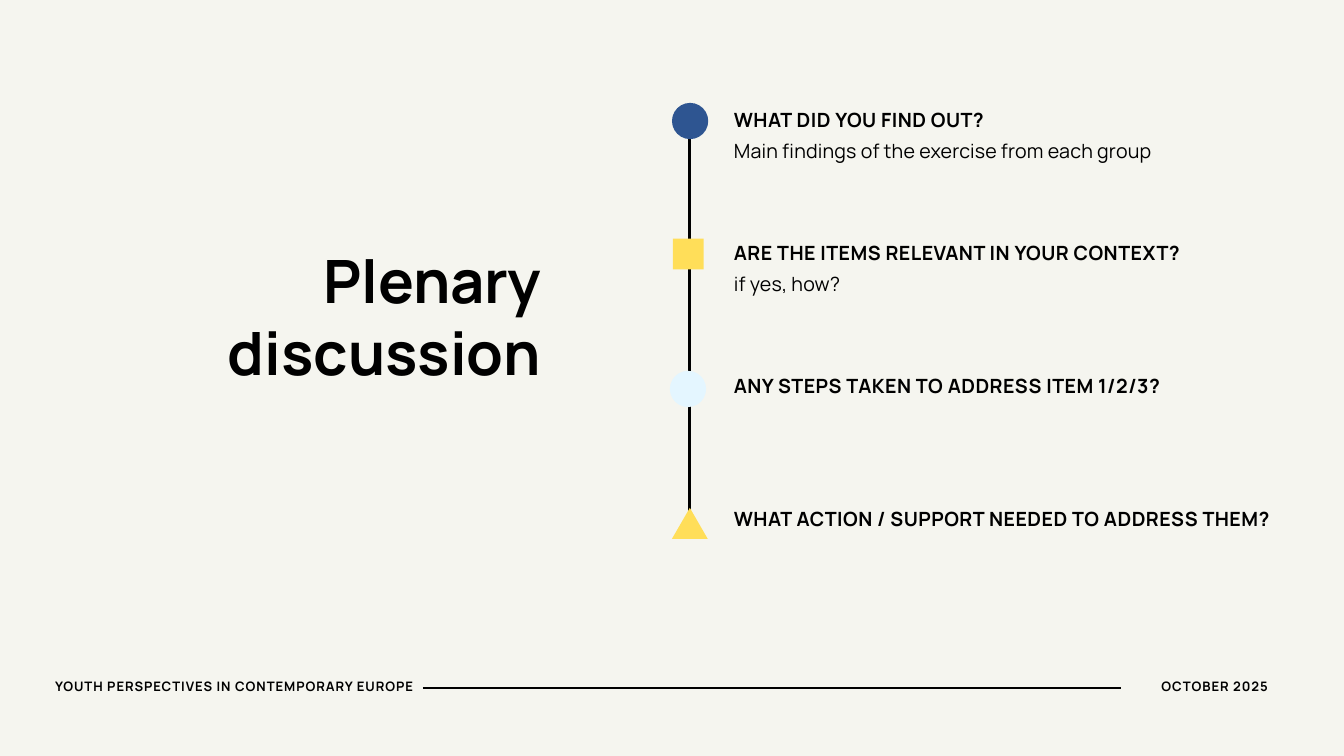
import pptx
import pptx.dml.color
import pptx.enum.shapes
import pptx.enum.text
import pptx.oxml.ns
import pptx.util
from lxml import etree
from pptx.util import Cm, Pt

COLOURS = {
    "paper": "F5F5EF",
    "ink": "000000",
    "blue": "2E5591",
    "yellow": "FFDE59",
    "ice": "E4F6FF",
}
FONT = "Manrope"
SHAPES = pptx.enum.shapes.MSO_SHAPE
ALIGN = pptx.enum.text.PP_ALIGN

FIRST_TOP = 4.09
PITCH = 5.03
DETAIL_OFFSET = 1.07
TEXT_LEFT = 27.74

QUESTIONS = [
    ("WHAT DID YOU FIND OUT?", "Main findings of the exercise from each group", 19.41),
    ("ARE THE ITEMS RELEVANT IN YOUR CONTEXT?", "if yes, how?", 19.41),
    ("ANY STEPS TAKEN TO ADDRESS ITEM 1/2/3?", None, 19.41),
    ("WHAT ACTION / SUPPORT NEEDED TO ADDRESS THEM?", None, 20.68),
]
MARKERS = [
    (SHAPES.OVAL, "blue", 25.4, 3.89, 1.37, 1.37),
    (SHAPES.RECTANGLE, "yellow", 25.43, 9.02, 1.17, 1.17),
    (SHAPES.OVAL, "ice", 25.32, 14.02, 1.37, 1.37),
    (SHAPES.ISOSCELES_TRIANGLE, "yellow", 25.4, 19.2, 1.35, 1.17),
]


def colour(name):
    return pptx.dml.color.RGBColor.from_string(COLOURS[name])


def write_text(box, text, size, leading, bold=True, spacing=0, align=ALIGN.LEFT):
    frame = box.text_frame
    frame.word_wrap = True
    frame.auto_size = pptx.enum.text.MSO_AUTO_SIZE.NONE
    frame.vertical_anchor = pptx.enum.text.MSO_ANCHOR.TOP
    frame.margin_left = frame.margin_right = 0
    frame.margin_top = frame.margin_bottom = 0
    frame.text = text
    para = frame.paragraphs[0]
    para.alignment = align
    para.line_spacing = Pt(leading)
    para.space_before = Pt(0)
    para.font.name = FONT
    para.font.size = Pt(size)
    para.font.bold = bold
    para.font.color.rgb = colour("ink")
    properties = para._p.pPr.find(pptx.oxml.ns.qn("a:defRPr"))
    properties.set("spc", str(round(spacing * 100)))


def add_text(page, left, top, width, height, text, size, leading, **style):
    box = page.shapes.add_textbox(Cm(left), Cm(top), Cm(width), Cm(height))
    write_text(box, text, size, leading, **style)


def add_title(page, text):
    title = page.shapes.title
    title.left, title.top = Cm(4.75), Cm(9.22)
    title.width, title.height = Cm(15.7), Cm(5.49)
    write_text(title, text, 64, 76.8, align=ALIGN.RIGHT)


def add_line(page, start, end, weight):
    line = page.shapes.add_connector(
        pptx.enum.shapes.MSO_CONNECTOR.STRAIGHT,
        Cm(start[0]), Cm(start[1]), Cm(end[0]), Cm(end[1]),
    )
    line.line.color.rgb = colour("ink")
    line.line.width = Pt(weight)
    etree.SubElement(line._element.spPr, pptx.oxml.ns.qn("a:effectLst"))


def add_marker(page, kind, fill, left, top, width, height):
    marker = page.shapes.add_shape(kind, Cm(left), Cm(top), Cm(width), Cm(height))
    marker.shadow.inherit = False
    marker.fill.solid()
    marker.fill.fore_color.rgb = colour(fill)
    marker.line.fill.background()


def add_question(page, index, heading, detail, width):
    top = FIRST_TOP + index * PITCH
    add_text(page, TEXT_LEFT, top, width, 0.91, heading, 21, 25.2, spacing=0.5)
    if detail:
        add_text(page, TEXT_LEFT, top + DETAIL_OFFSET, width, 0.97, detail,
                 21, 27.3, bold=False, spacing=0.2)


def add_footer(page):
    add_line(page, (15.98, 26.02), (42.39, 26.02), 2.2)
    add_text(page, 2.08, 25.65, 13.56, 0.64,
             "YOUTH PERSPECTIVES IN CONTEMPORARY EUROPE", 14, 16.8, spacing=1)
    add_text(page, 42.7, 25.65, 5.23, 0.64, "OCTOBER 2025",
             14, 16.8, spacing=1, align=ALIGN.RIGHT)


def main():
    deck = pptx.Presentation()
    deck.slide_width, deck.slide_height = Cm(50.8), Cm(28.58)
    page = deck.slides.add_slide(deck.slide_layouts.get_by_name("Title Only"))
    page.background.fill.solid()
    page.background.fill.fore_color.rgb = colour("paper")

    add_title(page, "Plenary discussion")
    add_line(page, (26.07, 3.89), (26.07, 19.69), 3.6)
    for marker in MARKERS:
        add_marker(page, *marker)
    for index, question in enumerate(QUESTIONS):
        add_question(page, index, *question)
    add_footer(page)
    deck.save("out.pptx")


if __name__ == "__main__":
    main()
